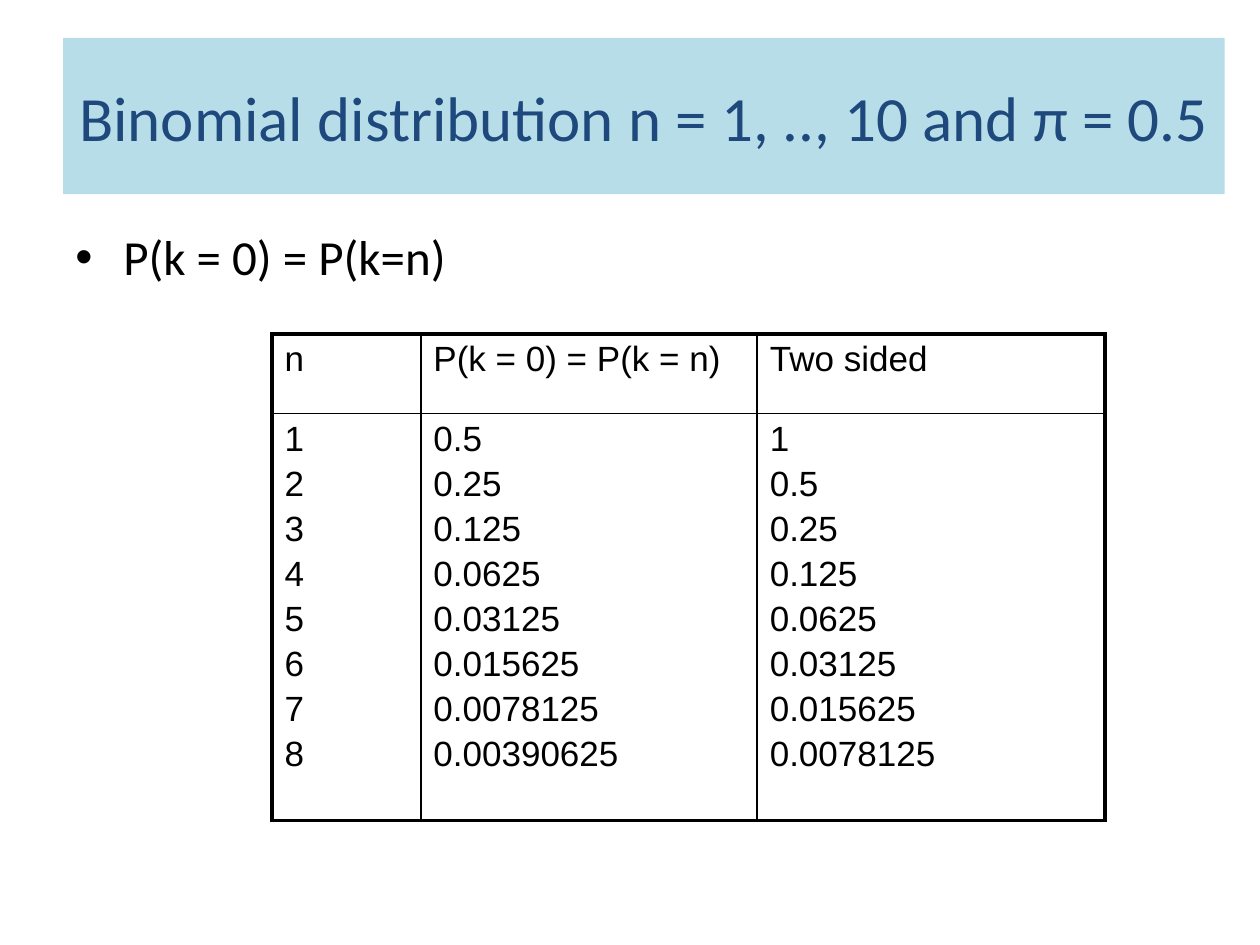
from lxml import etree
from pptx import Presentation
from pptx import util as u
from pptx.dml.color import RGBColor
from pptx.enum import text
from pptx.oxml.ns import qn

HUES = {"band": "B7DEE8", "title": "1F497D", "ink": "000000"}
COLS = [1.18, 2.67, 2.76]
ROWS = [0.63, 3.23]
HEADS = ["n", "P(k = 0) = P(k = n)", "Two sided"]
VALUES = [
    ["1", "2", "3", "4", "5", "6", "7", "8"],
    ["0.5", "0.25", "0.125", "0.0625", "0.03125", "0.015625", "0.0078125", "0.00390625"],
    ["1", "0.5", "0.25", "0.125", "0.0625", "0.03125", "0.015625", "0.0078125"],
]


def place(shape, left, top, width, height):
    shape.left, shape.top = u.Inches(left), u.Inches(top)
    shape.width, shape.height = u.Inches(width), u.Inches(height)


def style(para, name, size, hue):
    para.font.name = name
    para.font.size = u.Pt(size)
    para.font.color.rgb = RGBColor.from_string(HUES[hue])


def add_title(slide):
    title = slide.shapes.title
    place(title, 0.5, 0.3, 9.22, 1.24)
    title.fill.solid()
    title.fill.fore_color.rgb = RGBColor.from_string(HUES["band"])
    frame = title.text_frame
    frame.text = "Binomial distribution n = 1, .., 10 and π = 0.5"
    frame.vertical_anchor = text.MSO_ANCHOR.MIDDLE
    para = frame.paragraphs[0]
    para.alignment = text.PP_ALIGN.CENTER
    style(para, "Calibri", 36, "title")


def add_bullet(slide):
    box = slide.shapes.add_textbox(*map(u.Inches, (0.5, 1.75, 4.42, 4.95)))
    frame = box.text_frame
    frame.word_wrap = True
    para = frame.paragraphs[0]
    para.text = "P(k = 0) = P(k=n)"
    para.space_before = u.Pt(5.6)
    style(para, "Calibri", 28, "ink")
    props = para._p.get_or_add_pPr()
    props.set("marL", str(u.Inches(0.38)))
    props.set("indent", str(-u.Inches(0.38)))
    etree.SubElement(props, qn("a:buFont"), typeface="Arial")
    etree.SubElement(props, qn("a:buChar"), char="•")


def rule(cell, side, width):
    """Draw one border of a cell; side is L, R, T or B."""
    line = etree.SubElement(cell._tc.get_or_add_tcPr(), qn("a:ln" + side), w=str(u.Pt(width)))
    fill = etree.SubElement(line, qn("a:solidFill"))
    etree.SubElement(fill, qn("a:srgbClr"), val=HUES["ink"])


def fill_cell(cell, lines):
    frame = cell.text_frame
    frame.text = "\n".join(lines)
    for para in frame.paragraphs:
        para.space_before = u.Pt(3.4)
        style(para, "Arial", 20, "ink")


def add_grid(slide):
    spot = map(u.Inches, (2.16, 2.65, sum(COLS), sum(ROWS)))
    table = slide.shapes.add_table(len(ROWS), len(COLS), *spot).table
    table.first_row = table.horz_banding = False
    for row, height in zip(table.rows, ROWS):
        row.height = u.Inches(height)
    for c, width in enumerate(COLS):
        table.columns[c].width = u.Inches(width)
        for r, lines in enumerate(([HEADS[c]], VALUES[c])):
            cell = table.cell(r, c)
            fill_cell(cell, lines)
            outer = {"L": c == 0, "R": c == len(COLS) - 1,
                     "T": r == 0, "B": r == len(ROWS) - 1}
            for side, edge in outer.items():
                rule(cell, side, 2.25 if edge else 1)
            cell.fill.background()


def main():
    deck = Presentation()
    deck.slide_width, deck.slide_height = u.Inches(10), u.Inches(7.5)
    slide = deck.slides.add_slide(deck.slide_layouts[5])
    add_title(slide)
    add_bullet(slide)
    add_grid(slide)
    deck.save("out.pptx")


if __name__ == "__main__":
    main()
